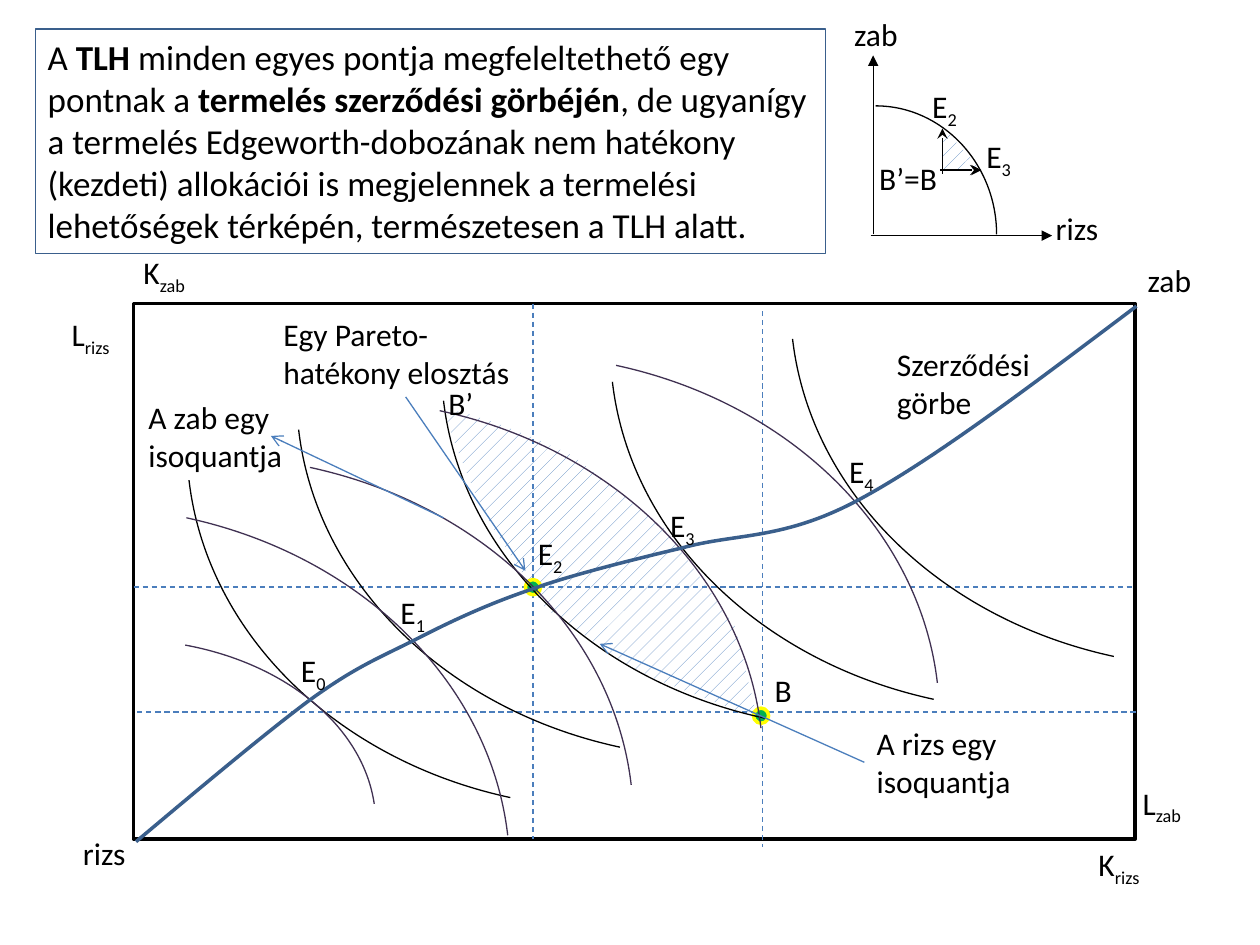
from copy import deepcopy

from lxml.etree import SubElement
from pptx import Presentation
from pptx.dml.color import RGBColor
from pptx.enum.dml import MSO_LINE, MSO_PATTERN
from pptx.enum.shapes import MSO_CONNECTOR, MSO_SHAPE
from pptx.enum.text import MSO_AUTO_SIZE
from pptx.oxml.ns import qn
from pptx.util import Inches, Pt

COLORS = {
    "black": "000000", "white": "FFFFFF", "blue": "4B7EBC", "navy": "3A5F8C",
    "purple": "403152", "hatch": "4F81BD", "green": "00B050", "yellow": "FFFF00",
}
# Offsets from the start of an arc: two control points, the end, the pie centre
ISOQUANT = [(1.39, 0.3), (2.41, 1.31), (2.55, 2.52), (-0.81, 2.8)]
SMALL_ISOQUANT = [(0.81, 0.15), (1.41, 0.65), (1.5, 1.26), (-0.48, 1.4)]
FRONTIER = [(0.53, 0), (0.96, 0.46), (0.96, 1.02), (0, 1.02)]


def rgb(name):
    return RGBColor.from_string(COLORS[name])


def write_run(paragraph, text, size=18, bold=False, subscript=False):
    run = paragraph.add_run()
    run.text = text
    run.font.size = Pt(size)
    run.font.name = "Calibri"
    run.font.bold = bold
    run.font.color.rgb = rgb("black")
    if subscript:
        run.font._element.set("baseline", "-25000")


def bend(contour, segments):
    """Turn each run of three line segments into one cubic curve."""
    lines = iter(contour.findall(qn("a:lnTo")))
    for segment in segments:
        group = [next(lines) for _ in segment]
        if len(group) == 3:
            cubic = SubElement(contour, qn("a:cubicBezTo"))
            group[0].addprevious(cubic)
            for line in group:
                cubic.append(line[0])
                contour.remove(line)


class Diagram:
    def __init__(self, slide, font_size=18, line_width=0.75):
        self.slide = slide
        self.shapes = slide.shapes
        self.font_size = font_size
        self.line_width = line_width

    def stroke(self, shape, color, width=None):
        shape.line.color.rgb = rgb(color)
        shape.line.width = Pt(width or self.line_width)

    def shape(self, kind, left, top, width, height, line, fill=None):
        shape = self.shapes.add_shape(
            kind, Inches(left), Inches(top), Inches(width), Inches(height))
        shape.shadow.inherit = False
        if fill:
            shape.fill.solid()
            shape.fill.fore_color.rgb = rgb(fill)
        else:
            shape.fill.background()
        self.stroke(shape, line, 2)

    def point(self, x, y):
        self.shape(MSO_SHAPE.OVAL, x - 0.06, y - 0.06, 0.12, 0.12, "yellow", "green")

    def line(self, start, end, color="blue", dashed=False, arrow=None):
        connector = self.shapes.add_connector(
            MSO_CONNECTOR.STRAIGHT, *(Inches(v) for v in (*start, *end)))
        self.stroke(connector, color)
        if dashed:
            connector.line.dash_style = MSO_LINE.DASH
        if arrow:
            SubElement(connector.line._get_or_add_ln(), qn("a:tailEnd"), type=arrow)
        SubElement(connector._element.spPr, qn("a:effectLst"))

    def outline(self, start, segments, closed=False):
        """Draw segments of one point (line) or three points (cubic curve)."""
        builder = self.shapes.build_freeform(*(Inches(v) for v in start), scale=1.0)
        builder.add_line_segments(
            [(Inches(x), Inches(y)) for segment in segments for x, y in segment],
            close=closed)
        shape = builder.convert_to_shape()
        shape.shadow.inherit = False
        contour = next(shape._element.iter(qn("a:path")))
        bend(contour, segments)
        return shape, contour

    def curve(self, start, segments, color, width=None):
        shape, _ = self.outline(start, segments)
        shape.fill.background()
        self.stroke(shape, color, width)

    def arc(self, x, y, offsets, color, rotation=0):
        """Draw a pie whose curved edge alone has a line."""
        *controls, center = [(x + dx, y + dy) for dx, dy in offsets]
        shape, pie = self.outline((x, y), [controls, [center]], closed=True)
        edge = deepcopy(pie)
        for tag in ("a:lnTo", "a:close"):
            edge.remove(edge.find(qn(tag)))
        edge.set("fill", "none")
        pie.set("stroke", "0")
        pie.addprevious(edge)
        shape.rotation = rotation
        shape.fill.background()
        self.stroke(shape, color)

    def hatched_area(self, start, segments):
        shape, _ = self.outline(start, segments, closed=True)
        shape.fill.patterned()
        shape.fill.pattern = MSO_PATTERN.PERCENT_10
        shape.fill.fore_color.rgb = rgb("hatch")
        shape.fill.back_color.rgb = rgb("white")
        shape.line.fill.background()

    def text(self, left, top, width, height, runs, size=None, border=None):
        """Add a text box from (text, format) pairs."""
        box = self.shapes.add_textbox(
            Inches(left), Inches(top), Inches(width), Inches(height))
        frame = box.text_frame
        frame.word_wrap = True
        frame.auto_size = MSO_AUTO_SIZE.SHAPE_TO_FIT_TEXT
        for text, style in runs:
            write_run(frame.paragraphs[0], text, size=size or self.font_size, **style)
        if border:
            self.stroke(box, border)

    def label(self, left, top, text, sub="", width=0.67, height=0.4):
        runs = [(text, {})]
        if sub:
            runs.append((sub, {"subscript": True}))
        self.text(left, top, width, height, runs)


def draw_edgeworth_box(diagram):
    diagram.hatched_area((4.55, 3.62), [
        [(4.25, 3.47), (3.7, 3.25), (3.54, 3.25)],
        [(3.54, 3.32), (3.59, 3.48), (3.66, 3.64)],
        [(3.72, 3.79), (3.81, 4.04), (3.94, 4.23)],
        [(4.33, 4.83)], [(5.07, 5.34)], [(6.01, 5.7)], [(5.84, 4.98)], [(5.29, 4.21)],
    ])
    diagram.shape(MSO_SHAPE.RECTANGLE, 1.06, 2.41, 7.95, 4.25, "black")
    for x, y, left, top in [(4.23, 4.66, 1.06, 2.41), (6.05, 5.65, 1.09, 2.47)]:
        diagram.line((left, y), (left + 7.95, y), dashed=True)
        diagram.line((x, top), (x, top + 4.25), dashed=True)
    diagram.point(4.23, 4.66)
    diagram.point(6.04, 5.68)

    for left, top in [(1.5, 3.53), (2.37, 3.13), (3.52, 2.9), (6.29, 2.41), (4.86, 2.75)]:
        diagram.arc(left + 0.81, top, ISOQUANT, "black", rotation=180)
    for x, y in [(3.49, 3.26), (2.46, 3.71), (1.48, 4.11), (4.89, 2.9)]:
        diagram.arc(x, y, ISOQUANT, "purple")
    diagram.arc(1.47, 5.12, SMALL_ISOQUANT, "purple")

    diagram.curve((1.08, 6.68), [
        [(1.58, 6.26), (2.08, 5.84), (2.44, 5.57)],
        [(2.81, 5.3), (2.99, 5.23), (3.29, 5.08)],
        [(3.58, 4.93), (3.88, 4.79), (4.24, 4.67)],
        [(4.59, 4.54), (5.41, 4.35), (5.41, 4.35)],
        [(5.84, 4.23), (6.21, 4.29), (6.81, 3.97)],
        [(7.41, 3.65), (8.21, 3.04), (9.02, 2.43)],
    ], "navy", 2)

    for start, end in [((3.22, 3.15), (4.17, 4.53)), ((6.86, 6.05), (4.76, 5.11)),
                       ((3.52, 4.11), (2.15, 3.46))]:
        diagram.line(start, end, arrow="arrow")
    for left, top, width, note in [
            (7.02, 2.69, 1.26, "Szerződési görbe"),
            (2.15, 2.45, 2.14, "Egy Pareto-hatékony elosztás"),
            (6.86, 5.7, 1.84, "A rizs egy isoquantja"),
            (1.08, 3.11, 1.5, "A zab egy isoquantja")]:
        diagram.label(left, top, note, width=width, height=0.71)
    for number, (left, top) in enumerate([
            (2.29, 5.12), (3.08, 4.66), (4.17, 4.19), (5.22, 3.97), (6.64, 3.54)]):
        diagram.label(left, top, "E", str(number))
    for left, top, width, name, sub in [
            (6.05, 5.28, 0.63, "B", ""), (3.46, 3, 0.63, "B’", ""),
            (8.62, 6.66, 0.63, "K", "rizs"), (0.47, 2.45, 0.63, "L", "rizs"),
            (1.04, 1.96, 0.76, "K", "zab"), (8.97, 6.17, 0.76, "L", "zab"),
            (0.56, 6.57, 1.14, "rizs", ""), (9.01, 2.02, 0.57, "zab", "")]:
        diagram.label(left, top, name, sub, width)


def draw_production_frontier(diagram):
    diagram.hatched_area((7.79, 1.35), [[(7.48, 1.35)], [(7.49, 1.02)]])
    diagram.arc(6.95, 0.84, FRONTIER, "black")
    for start, end, arrow in [
            ((6.93, 1.86), (6.93, 0.44), "triangle"),
            ((6.91, 1.87), (8.35, 1.87), "triangle"),
            ((7.48, 1.35), (7.79, 1.35), "stealth"),
            ((7.46, 1.35), (7.78, 1.35), "stealth"),
            ((7.48, 1.38), (7.48, 1.02), "stealth")]:
        diagram.line(start, end, "black", arrow=arrow)
    for left, top, width, name, sub in [
            (8.28, 1.61, 1.14, "rizs", ""), (6.68, 0.07, 0.57, "zab", ""),
            (6.88, 1.21, 0.73, "B’=B", ""), (7.3, 0.64, 0.49, "E", "2"),
            (7.73, 1.04, 0.49, "E", "3")]:
        diagram.label(left, top, name, sub, width)


def main():
    presentation = Presentation()
    presentation.slide_width, presentation.slide_height = Inches(10), Inches(7.5)
    diagram = Diagram(presentation.slides.add_slide(presentation.slide_layouts[6]))
    draw_edgeworth_box(diagram)
    diagram.text(0.28, 0.23, 6.27, 1.78, [
        ("A ", {}), ("TLH", {"bold": True}),
        (" minden egyes pontja megfeleltethető egy pontnak a ", {}),
        ("termelés szerződési görbéjén", {"bold": True}),
        (", de ugyanígy a termelés Edgeworth-dobozának nem hatékony (kezdeti) "
         "allokációi is megjelennek a termelési lehetőségek térképén, "
         "természetesen a TLH alatt.", {}),
    ], size=20, border="navy")
    draw_production_frontier(diagram)
    presentation.save("out.pptx")


if __name__ == "__main__":
    main()
